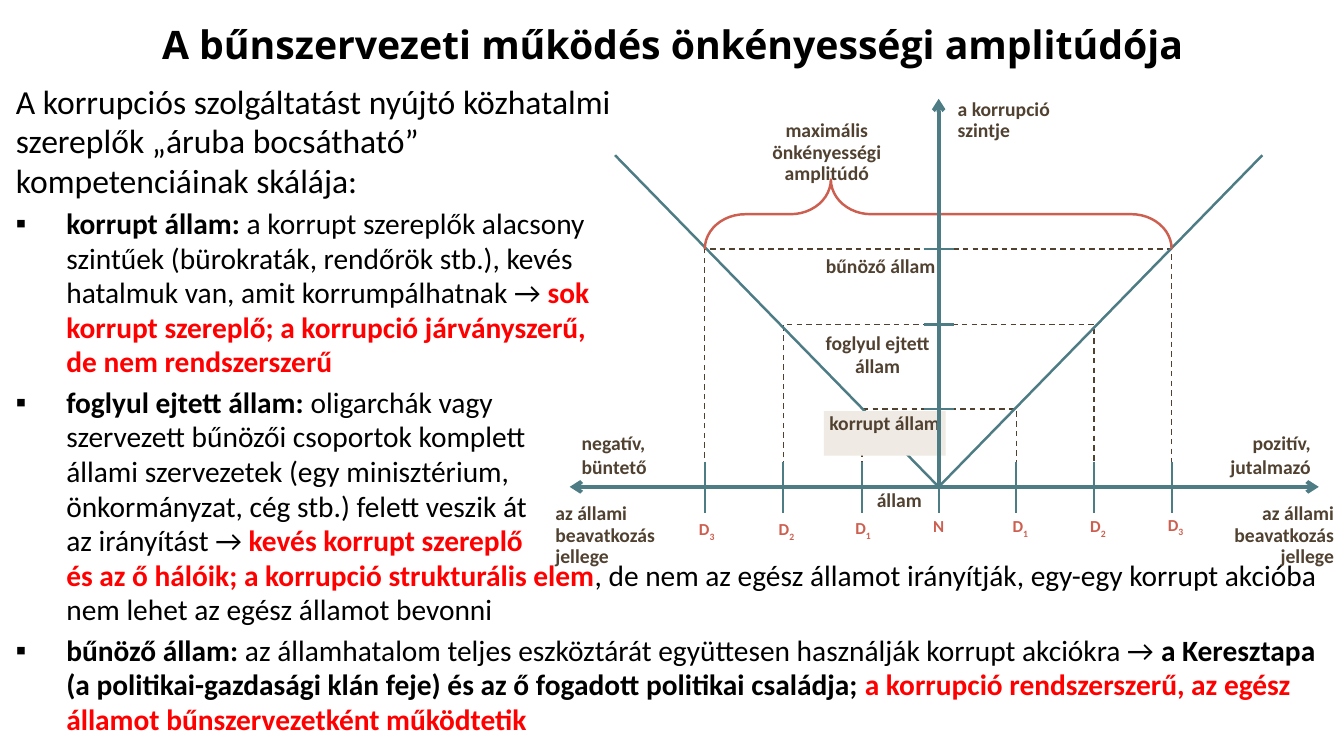
from lxml import etree
from pptx import Presentation
from pptx.dml.color import RGBColor
from pptx.enum.dml import MSO_LINE
from pptx.enum.shapes import MSO_CONNECTOR, MSO_SHAPE
from pptx.enum.text import MSO_ANCHOR, MSO_AUTO_SIZE, PP_ALIGN
from pptx.oxml.ns import qn
from pptx.util import Pt

PX = 9144
LEFT, CENTER, RIGHT = PP_ALIGN.LEFT, PP_ALIGN.CENTER, PP_ALIGN.RIGHT
TOP, MIDDLE = MSO_ANCHOR.TOP, MSO_ANCHOR.MIDDLE
NO_FIT = MSO_AUTO_SIZE.NONE
RECT, BRACE = MSO_SHAPE.RECTANGLE, MSO_SHAPE.LEFT_BRACE
STRAIGHT, DASH = MSO_CONNECTOR.STRAIGHT, MSO_LINE.DASH

BLACK = RGBColor(0x00, 0x00, 0x00)
RED = RGBColor(0xFF, 0x00, 0x00)
BROWN = RGBColor(0x50, 0x41, 0x31)
TEAL = RGBColor(0x4D, 0x7C, 0x85)
CORAL = RGBColor(0xCD, 0x5F, 0x50)
SAND = RGBColor(0xEF, 0xEA, 0xE4)

TITLE = "A bűnszervezeti működés önkényességi amplitúdója"
TITLE_FONT = {"name": "Open Sans", "size": Pt(28), "bold": True, "color": BLACK}
LEAD = {"name": "Calibri", "size": Pt(24), "bold": False, "color": BLACK}
PLAIN = {**LEAD, "size": Pt(21)}
BOLD = {**PLAIN, "bold": True}
ALERT = {**BOLD, "color": RED}
LABEL = {**BOLD, "size": Pt(14), "color": BROWN}
MARK = {**BOLD, "size": Pt(12), "color": CORAL}

INTRO = [("A korrupciós szolgáltatást nyújtó közhatalmi\nszereplők „áruba bocsátható”\n"
          "kompetenciáinak skálája:", LEAD)]
BULLETS = [
    [("korrupt állam:", BOLD),
     (" a korrupt szereplők alacsony\nszintűek (bürokraták, rendőrök stb.), kevés\n"
      "hatalmuk van, amit korrumpálhatnak → ", PLAIN),
     ("sok\nkorrupt szereplő; a korrupció járványszerű,\nde nem rendszerszerű", ALERT)],
    [("foglyul ejtett állam:", BOLD),
     (" oligarchák vagy\nszervezett bűnözői csoportok komplett\n"
      "állami szervezetek (egy minisztérium,\nönkormányzat, cég stb.) felett veszik át\n"
      "az irányítást → ", PLAIN),
     ("kevés korrupt szereplő\nés az ő hálóik; a korrupció strukturális elem", ALERT),
     (", de nem az egész államot irányítják, egy-egy korrupt akcióba "
      "nem lehet az egész államot bevonni", PLAIN)],
    [("bűnöző állam:", BOLD),
     (" az államhatalom teljes eszköztárát együttesen használják korrupt akciókra → ", PLAIN),
     ("a Keresztapa (a politikai-gazdasági klán feje) és az ő fogadott politikai családja; ",
      BOLD),
     ("a korrupció rendszerszerű, az egész államot bűnszervezetként működtetik", ALERT)],
]

AXIS_X, AXIS_Y = 931, 483
TICKS = [699, 777, 855, AXIS_X, 1008, 1085, 1162]
LEVELS = [247, 322, 406]
MARKS = [("D", "3", 701, 510), ("D", "2", 780, 510), ("D", "1", 856, 509), ("N", "", 931, 507),
         ("D", "1", 1012, 507), ("D", "2", 1089, 507), ("D", "3", 1166, 506)]
MARK_W, MARK_H = 80, 42

WIDE, SNUG = (10, 5), (5, 0)
STATE_LABELS = [
    ("foglyul ejtett állam", (810, 328, 121, 49), CENTER, 1.0, SNUG, None),
    ("állam", (853, 479, 78, 37), CENTER, 1.0, WIDE, None),
    ("bűnöző állam", (810, 252, 127, 34), CENTER, 1.0, SNUG, None),
    ("korrupt állam", (817, 408, 121, 44), CENTER, 1.0, SNUG, SAND),
]
AXIS_LABELS = [
    ("a korrupció\nszintje", (940, 94, 118, 56), LEFT, 0.9, WIDE, None),
    ("az állami\nbeavatkozás\njellege", (1186, 495, 147, 59), RIGHT, 0.9, WIDE, None),
    ("pozitív,\njutalmazó", (1193, 423, 117, 57), RIGHT, 1.0, WIDE, None),
    ("negatív,\nbüntető", (567, 423, 101, 54), LEFT, 1.0, WIDE, None),
    ("az állami\nbeavatkozás\njellege", (541, 495, 148, 56), LEFT, 0.9, WIDE, None),
    ("maximális\nönkényességi\namplitúdó", (714, 115, 212, 58), CENTER, 0.9, WIDE, None),
]

prs = Presentation()
prs.slide_width, prs.slide_height = 1333 * PX, 750 * PX
s = prs.slides.add_slide(prs.slide_layouts[5])


def emu(box):
    return [v * PX for v in box]


def style(font, fmt):
    for key, value in fmt.items():
        if key == "color":
            font.color.rgb = value
        else:
            setattr(font, key, value)


def add_runs(p, runs):
    for text, fmt in runs:
        for i, line in enumerate(text.split("\n")):
            if i:
                p.add_line_break()
            r = p.add_run()
            r.text = line
            style(r.font, fmt)


def setup_frame(sp, inset=WIDE, anchor=TOP):
    tf = sp.text_frame
    dx, dy = emu(inset)
    for key, value in {"word_wrap": True, "auto_size": NO_FIT, "vertical_anchor": anchor,
                       "margin_left": dx, "margin_right": dx,
                       "margin_top": dy, "margin_bottom": dy}.items():
        setattr(tf, key, value)
    return tf


def add_preset(kind, box):
    sp = s.shapes.add_shape(kind, *emu(box))
    sp.shadow.inherit = False
    sp.fill.background()
    sp.line.fill.background()
    return sp


def stroke(sp, color, width):
    sp.line.color.rgb = color
    sp.line.width = Pt(width)


def add_line(x1, y1, x2, y2, width, ends=()):
    c = s.shapes.add_connector(STRAIGHT, *emu((x1, y1, x2, y2)))
    stroke(c, TEAL, width)
    for end in ends:
        etree.SubElement(c.line._get_or_add_ln(), qn("a:" + end), type="arrow")
    etree.SubElement(c._element.spPr, qn("a:effectLst"))


def add_label(text, box, align, spacing, inset, fill):
    if fill is None:
        sp = s.shapes.add_textbox(*emu(box))
    else:
        sp = add_preset(RECT, box)
        sp.fill.solid()
        sp.fill.fore_color.rgb = fill
    p = setup_frame(sp, inset).paragraphs[0]
    p.alignment, p.line_spacing = align, spacing
    add_runs(p, [(text, LABEL)])


title = s.shapes.title
title.left, title.top, title.width, title.height = emu((16, 19, 1302, 49))
p = setup_frame(title, anchor=MIDDLE).paragraphs[0]
p.alignment = CENTER
add_runs(p, [(TITLE, TITLE_FONT)])

for i, y in enumerate(LEVELS):
    left, right = TICKS[i], TICKS[-1 - i]
    sp = add_preset(RECT, (left, y, right - left, AXIS_Y - y))
    stroke(sp, BROWN, 1)
    sp.line.dash_style = DASH

for x in TICKS:
    add_line(x, 458, x, 509, 1.5)

for letter, index, x, y in MARKS:
    sp = s.shapes.add_textbox(*emu((x - MARK_W // 2, y, MARK_W, MARK_H)))
    p = setup_frame(sp).paragraphs[0]
    p.alignment = CENTER
    add_runs(p, [(letter, MARK)])
    if index:
        add_runs(p, [(index, MARK)])
        p.runs[-1]._r.get_or_add_rPr().set("baseline", "-25000")

for x in (610, 1252):
    add_line(AXIS_X, AXIS_Y, x, 154, 1.75)
for y in LEVELS:
    add_line(AXIS_X - 15, y, AXIS_X + 15, y, 1.5)
for label in STATE_LABELS + AXIS_LABELS:
    add_label(*label)

brace = add_preset(BRACE, (896, -19, 69, 463))
brace.rotation = 90
brace.adjustments[0], brace.adjustments[1] = 0.58, 0.73
stroke(brace, CORAL, 1.75)

add_line(565, AXIS_Y, 1308, AXIS_Y, 2.75, ("headEnd", "tailEnd"))
add_line(AXIS_X, AXIS_Y, AXIS_X, 98, 2.75, ("tailEnd",))

tf = setup_frame(s.shapes.add_textbox(*emu((6, 77, 1327, 651))))
p = tf.paragraphs[0]
p.line_spacing = 0.98
add_runs(p, INTRO)
for runs in BULLETS:
    p = tf.add_paragraph()
    pPr = p._p.get_or_add_pPr()
    pPr.set("marL", str(50 * PX))
    pPr.set("indent", str(-50 * PX))
    etree.SubElement(pPr, qn("a:buFont"), typeface="Calibri")
    etree.SubElement(pPr, qn("a:buChar"), char="▪")
    p.line_spacing, p.space_before = 0.98, Pt(4.2)
    add_runs(p, runs)

prs.save("out.pptx")
